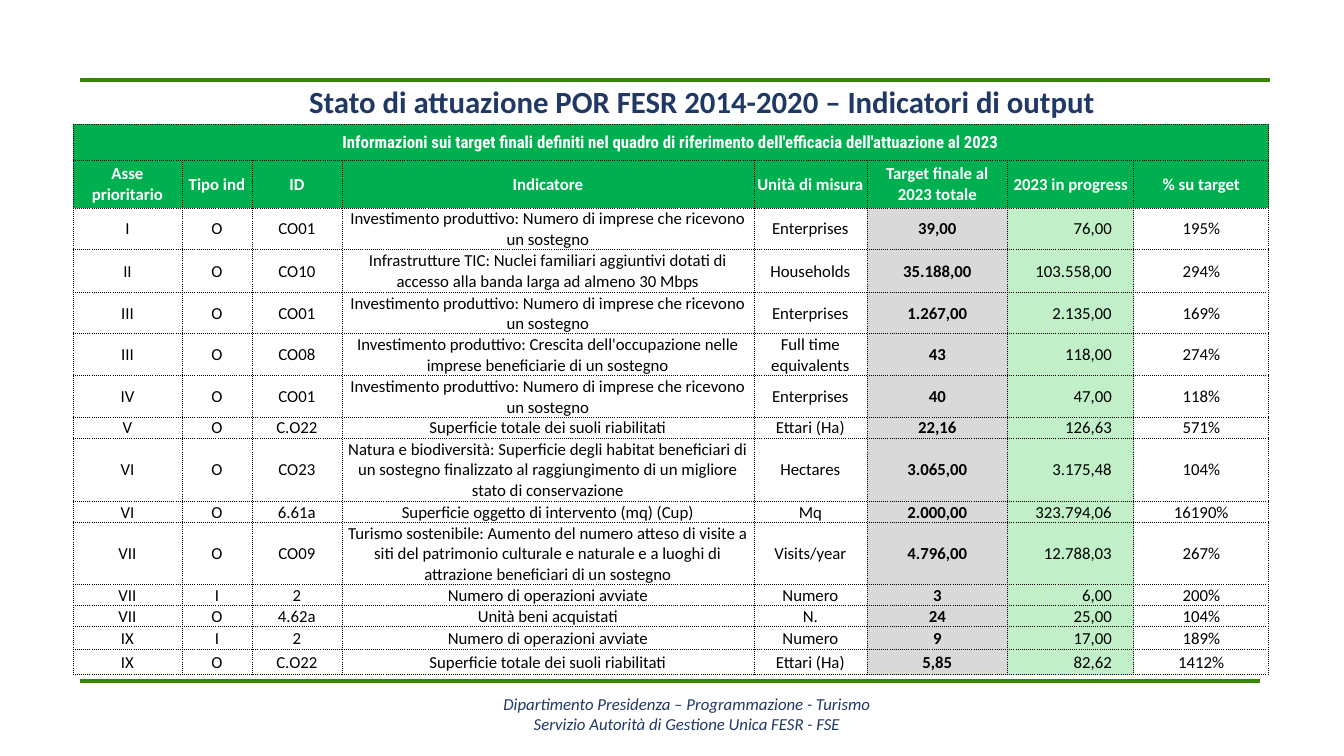
from lxml.etree import SubElement
from pptx import Presentation
from pptx.dml.color import RGBColor
from pptx.enum.shapes import MSO_CONNECTOR
from pptx.enum.text import MSO_ANCHOR, PP_ALIGN
from pptx.oxml.ns import qn
from pptx.util import Emu, Pt

TITLE = "Stato di attuazione POR FESR 2014-2020 – Indicatori di output"
FOOTER = [
    "Dipartimento Presidenza – Programmazione - Turismo",
    "Servizio Autorità di Gestione Unica FESR - FSE",
]
TABLE_TITLE = ("Informazioni sui target finali definiti nel quadro di riferimento "
               "dell'efficacia dell'attuazione al 2023")
HEADERS = ["Asse prioritario", "Tipo ind", "ID", "Indicatore", "Unità di misura",
           "Target finale al 2023 totale", "2023 in progress", "% su target"]
ENTERPRISES = "Investimento produttivo: Numero di imprese che ricevono un sostegno"
BROADBAND = ("Infrastrutture TIC: Nuclei familiari aggiuntivi dotati di accesso "
             "alla banda larga ad almeno 30 Mbps")
EMPLOYMENT = ("Investimento produttivo: Crescita dell'occupazione nelle imprese "
              "beneficiarie di un sostegno")
SOILS = "Superficie totale dei suoli riabilitati"
HABITATS = ("Natura e biodiversità: Superficie degli habitat beneficiari di un sostegno "
            "finalizzato al raggiungimento di un migliore stato di conservazione")
TOURISM = ("Turismo sostenibile: Aumento del numero atteso di visite a siti del patrimonio "
           "culturale e naturale e a luoghi di attrazione beneficiari di un sostegno")
OPERATIONS = "Numero di operazioni avviate"
INDICATORS = [
    ("I", "O", "CO01", ENTERPRISES, "Enterprises", "39,00", "76,00", "195%"),
    ("II", "O", "CO10", BROADBAND, "Households", "35.188,00", "103.558,00", "294%"),
    ("III", "O", "CO01", ENTERPRISES, "Enterprises", "1.267,00", "2.135,00", "169%"),
    ("III", "O", "CO08", EMPLOYMENT, "Full time equivalents", "43", "118,00", "274%"),
    ("IV", "O", "CO01", ENTERPRISES, "Enterprises", "40", "47,00", "118%"),
    ("V", "O", "C.O22", SOILS, "Ettari (Ha)", "22,16", "126,63", "571%"),
    ("VI", "O", "CO23", HABITATS, "Hectares", "3.065,00", "3.175,48", "104%"),
    ("VI", "O", "6.61a", "Superficie oggetto di intervento (mq) (Cup)", "Mq",
     "2.000,00", "323.794,06", "16190%"),
    ("VII", "O", "CO09", TOURISM, "Visits/year", "4.796,00", "12.788,03", "267%"),
    ("VII", "I", "2", OPERATIONS, "Numero", "3", "6,00", "200%"),
    ("VII", "O", "4.62a", "Unità beni acquistati", "N.", "24", "25,00", "104%"),
    ("IX", "I", "2", OPERATIONS, "Numero", "9", "17,00", "189%"),
    ("IX", "O", "C.O22", SOILS, "Ettari (Ha)", "5,85", "82,62", "1412%"),
]

COLORS = {
    "rule": "388600", "navy": "203864", "header": "00B050", "target": "D9D9D9",
    "progress": "C1F0C8", "white": "FFFFFF", "black": "000000",
}
COLUMN_WIDTHS = [109, 70, 90, 412, 113, 141, 126, 135]
ROW_HEIGHTS = [36, 48, 41, 43, 41, 42, 41, 21, 63, 20, 62, 21, 21, 23, 25]
TABLE_LEFT, TABLE_TOP = 73, 124
TARGET, PROGRESS, PERCENT = 5, 6, 7
COLUMN_FILLS = {TARGET: "target", PROGRESS: "progress", PERCENT: "white"}
RULES = [(80, 1270, 80), (80, 1260, 681)]  # left, right, y


def px(length):
    return Emu(round(length * 12192000 / 1344))


def color(name):
    return RGBColor.from_string(COLORS[name])


def write(paragraph, text, color_name, alignment=PP_ALIGN.CENTER, **font_format):
    paragraph.text = text
    paragraph.alignment = alignment
    values = {"name": "Calibri", "size": Pt(12), "bold": False, **font_format}
    for attribute, value in values.items():
        setattr(paragraph.font, attribute, value)
    paragraph.font.color.rgb = color(color_name)


def add_rule(slide, left, right, y):
    rule = slide.shapes.add_connector(MSO_CONNECTOR.STRAIGHT, px(left), px(y), px(right), px(y))
    rule.line.color.rgb = color("rule")
    rule.line.width = Pt(3.25)
    SubElement(rule._element.spPr, qn("a:effectLst"))


def add_text(slide, box, lines, margin_top, **font_format):
    frame = slide.shapes.add_textbox(*map(px, box)).text_frame
    frame.word_wrap = True
    frame.margin_top = px(margin_top)
    for index, line in enumerate(lines):
        paragraph = frame.add_paragraph() if index else frame.paragraphs[0]
        write(paragraph, line, "navy", **font_format)


def add_dotted_borders(cell):
    properties = cell._tc.get_or_add_tcPr()
    for side in ("lnL", "lnR", "lnT", "lnB"):
        border = SubElement(properties, qn(f"a:{side}"), w=str(Pt(0.5)))
        fill = SubElement(border, qn("a:solidFill"))
        SubElement(fill, qn("a:srgbClr"), val=COLORS["black"])
        SubElement(border, qn("a:prstDash"), val="dot")


def format_cell(cell, text, row, column):
    in_header = row < 2
    add_dotted_borders(cell)
    fill_name = "header" if in_header else COLUMN_FILLS.get(column)
    if fill_name:
        cell.fill.solid()
        cell.fill.fore_color.rgb = color(fill_name)
    else:
        cell.fill.background()
    align_right = column == PROGRESS and not in_header
    layout = {"vertical_anchor": MSO_ANCHOR.MIDDLE, "margin_left": px(1), "margin_top": px(1),
              "margin_right": px(22 if align_right else 1), "margin_bottom": 0}
    if column == PROGRESS and not in_header:
        layout["margin_left"] = 0
    for attribute, value in layout.items():
        setattr(cell, attribute, value)
    write(cell.text_frame.paragraphs[0], text,
          "white" if in_header else "black",
          PP_ALIGN.RIGHT if align_right else PP_ALIGN.CENTER,
          bold=in_header or column == TARGET,
          name="Calibri" if row else "Roboto Condensed")


def add_indicator_table(slide):
    rows = [[TABLE_TITLE] + [""] * (len(HEADERS) - 1), HEADERS, *INDICATORS]
    frame = slide.shapes.add_table(len(rows), len(HEADERS), px(TABLE_LEFT), px(TABLE_TOP),
                                   px(sum(COLUMN_WIDTHS)), px(sum(ROW_HEIGHTS)))
    table = frame.table
    table.first_row = table.horz_banding = False
    for column, width in zip(table.columns, COLUMN_WIDTHS):
        column.width = px(width)
    for row, height in zip(table.rows, ROW_HEIGHTS):
        row.height = px(height)
    for row, texts in enumerate(rows):
        for column, text in enumerate(texts):
            format_cell(table.cell(row, column), text, row, column)
    table.cell(0, 0).merge(table.cell(0, len(HEADERS) - 1))


def main():
    presentation = Presentation()
    presentation.slide_width, presentation.slide_height = px(1344), px(756)
    slide = presentation.slides.add_slide(presentation.slide_layouts[6])
    for rule in RULES:
        add_rule(slide, *rule)
    add_text(slide, (52, 694, 1270, 57), FOOTER, 0, italic=True)
    add_text(slide, (244, 78, 916, 47), [TITLE], 5, size=Pt(22), bold=True)
    add_indicator_table(slide)
    presentation.save("out.pptx")


if __name__ == "__main__":
    main()
